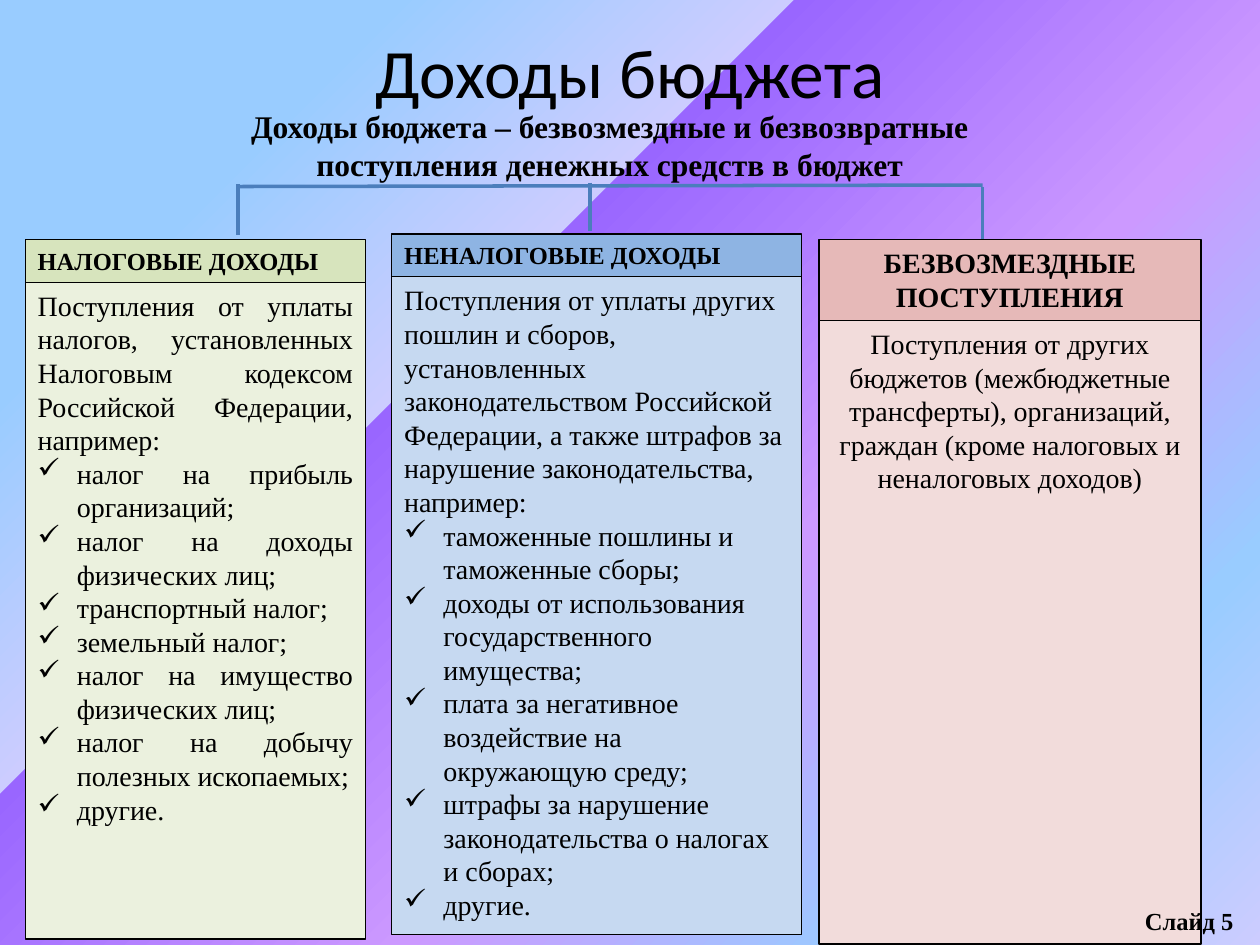
from lxml import etree
from pptx import Presentation
from pptx import util as u
from pptx.dml.color import RGBColor
from pptx.enum import shapes, text
from pptx.oxml.ns import qn

BLACK = RGBColor(0x00, 0x00, 0x00)
LINE_BLUE = RGBColor(0x4B, 0x7E, 0xBC)
GREEN, PALE_GREEN = RGBColor(0xD7, 0xE4, 0xBD), RGBColor(0xEB, 0xF1, 0xDE)
BLUE, PALE_BLUE = RGBColor(0x8E, 0xB4, 0xE3), RGBColor(0xC6, 0xD9, 0xF1)
ROSE, PALE_ROSE = RGBColor(0xE6, 0xB9, 0xB8), RGBColor(0xF2, 0xDC, 0xDB)
BACKDROP = [
    (0, RGBColor(0x99, 0xCC, 0xFF)),
    (18, RGBColor(0x99, 0xCC, 0xFF)),
    (36, RGBColor(0xCC, 0xCC, 0xFF)),
    (36, RGBColor(0x99, 0x66, 0xFF)),
    (61, RGBColor(0xCC, 0x99, 0xFF)),
    (82, RGBColor(0x99, 0xCC, 0xFF)),
    (100, RGBColor(0xCC, 0xCC, 0xFF)),
]
SERIF = "Times New Roman"
ALIGN = text.PP_ALIGN
LEFT, CENTER, RIGHT, JUSTIFY = ALIGN.LEFT, ALIGN.CENTER, ALIGN.RIGHT, ALIGN.JUSTIFY

COLUMNS = [
    dict(box=(0.51, 4.83, 6.86, 14.1), head_h=0.86, head="НАЛОГОВЫЕ ДОХОДЫ",
         head_size=14, head_align=LEFT, align=JUSTIFY, fills=(GREEN, PALE_GREEN),
         intro="Поступления от уплаты налогов, установленных Налоговым кодексом "
               "Российской Федерации, например:",
         items=["налог на прибыль организаций;", "налог на доходы физических лиц;",
                "транспортный налог;", "земельный налог;",
                "налог на имущество физических лиц;",
                "налог на добычу полезных ископаемых;", "другие."]),
    dict(box=(7.9, 4.72, 8.26, 14.12), head_h=0.86, head="НЕНАЛОГОВЫЕ ДОХОДЫ",
         head_size=14, head_align=LEFT, align=LEFT, fills=(BLUE, PALE_BLUE),
         intro="Поступления от уплаты других пошлин и сборов, установленных "
               "законодательством Российской Федерации, а также штрафов за "
               "нарушение законодательства, например:",
         items=["таможенные пошлины и таможенные сборы;",
                "доходы от использования государственного имущества;",
                "плата за негативное воздействие на окружающую среду;",
                "штрафы за нарушение законодательства о налогах и сборах;",
                "другие."]),
    dict(box=(16.51, 4.83, 7.7, 14.2), head_h=1.63, head="БЕЗВОЗМЕЗДНЫЕ ПОСТУПЛЕНИЯ",
         head_size=16, head_align=CENTER, align=CENTER, fills=(ROSE, PALE_ROSE),
         intro="Поступления от других бюджетов (межбюджетные трансферты), "
               "организаций, граждан (кроме налоговых и неналоговых доходов)",
         items=[]),
]


def paint_background(s):
    """Fill the slide with the diagonal gradient."""
    fill = s.background.fill
    fill.gradient()
    fill.gradient_angle = 315
    stops = next(s._element.iter(qn("a:gsLst")))
    for stop in list(stops):
        stops.remove(stop)
    for pos, color in BACKDROP:
        stop = etree.SubElement(stops, qn("a:gs"), pos=str(pos * 1000))
        etree.SubElement(stop, qn("a:srgbClr"), val=str(color))


def write(sp, lines, size, align, bold=False, font=SERIF, anchor=text.MSO_ANCHOR.TOP):
    """Put the lines into a shape as evenly formatted paragraphs."""
    tf = sp.text_frame
    tf.word_wrap = True
    tf.vertical_anchor = anchor
    tf.text = "\n".join(lines)
    for p in tf.paragraphs:
        p.alignment = align
        for r in p.runs:
            r.font.size, r.font.name, r.font.bold = u.Pt(size), font, bold
            r.font.color.rgb = BLACK
    return tf


def add_label(s, box, line, size, align, **style):
    """Place a text box holding one paragraph."""
    sp = s.shapes.add_textbox(*map(u.Cm, box))
    return write(sp, [line], size, align, **style)


def add_panel(s, box, fill):
    """Place a filled rectangle with a hairline border."""
    sp = s.shapes.add_shape(shapes.MSO_SHAPE.RECTANGLE, *map(u.Cm, box))
    sp.shadow.inherit = False
    sp.fill.solid()
    sp.fill.fore_color.rgb = fill
    sp.line.color.rgb = BLACK
    sp.line.width = u.Pt(0)
    return sp


def add_check(p):
    """Give a paragraph a check mark and a hanging indent."""
    pPr = p._p.get_or_add_pPr()
    indent = u.Cm(0.79)
    pPr.set("marL", str(indent))
    pPr.set("indent", str(-indent))
    etree.SubElement(pPr, qn("a:buChar"), char="✓")


def add_column(s, box, head_h, head, head_size, head_align, align, fills, intro, items):
    """Build one kind of income: a heading above its description."""
    x, y, w, h = box
    head_fill, body_fill = fills
    heading = add_panel(s, (x, y, w, head_h), head_fill)
    write(heading, [head], head_size, head_align, bold=True)
    body = add_panel(s, (x, y + head_h, w, h - head_h), body_fill)
    tf = write(body, [intro, *items], 16, align)
    for p in tf.paragraphs[1:]:
        add_check(p)


def add_line(s, x1, y1, x2, y2):
    """Draw one straight line of the bracket."""
    line = s.shapes.add_connector(
        shapes.MSO_CONNECTOR.STRAIGHT, *map(u.Cm, (x1, y1, x2, y2)))
    line.line.color.rgb = LINE_BLUE
    line.line.width = u.Pt(2)
    etree.SubElement(line._element.spPr, qn("a:effectLst"))


def add_bracket(s, box):
    """Draw the bar with three drops inside the box."""
    x, y, w, h = box
    add_line(s, x, y + 0.08, x + w, y + 0.05)
    add_line(s, x + 7.09, y, x + 7.09, y + h - 0.18)
    add_line(s, x + w, y + 0.08, x + w, y + h)
    add_line(s, x, y + 0.03, x, y + h - 0.1)


def add_heading(s, box):
    """Place the title and the definition below it."""
    x, y, w, h = box
    add_label(s, (x, y, w, 1.78), "Доходы бюджета", 39.6, CENTER,
              font="Calibri", anchor=text.MSO_ANCHOR.MIDDLE)
    add_label(s, (x + 3.43, y + 1.5, 15.19, h - 1.5),
              "Доходы бюджета – безвозмездные и безвозвратные поступления "
              "денежных средств в бюджет", 18, CENTER, bold=True)


def main():
    """Build and save the slide."""
    prs = Presentation()
    prs.slide_width, prs.slide_height = u.Cm(25.4), u.Cm(19.05)
    s = prs.slides.add_slide(prs.slide_layouts[6])
    paint_background(s)
    add_heading(s, (1.27, 0.53, 22.86, 3.3))
    add_bracket(s, (4.8, 3.68, 15.01, 1.15))
    for column in COLUMNS:
        add_column(s, **column)
    add_label(s, (21.31, 18.14, 3.81, 0.84), "Слайд 5", 14, RIGHT, bold=True)
    prs.save("out.pptx")


if __name__ == "__main__":
    main()
